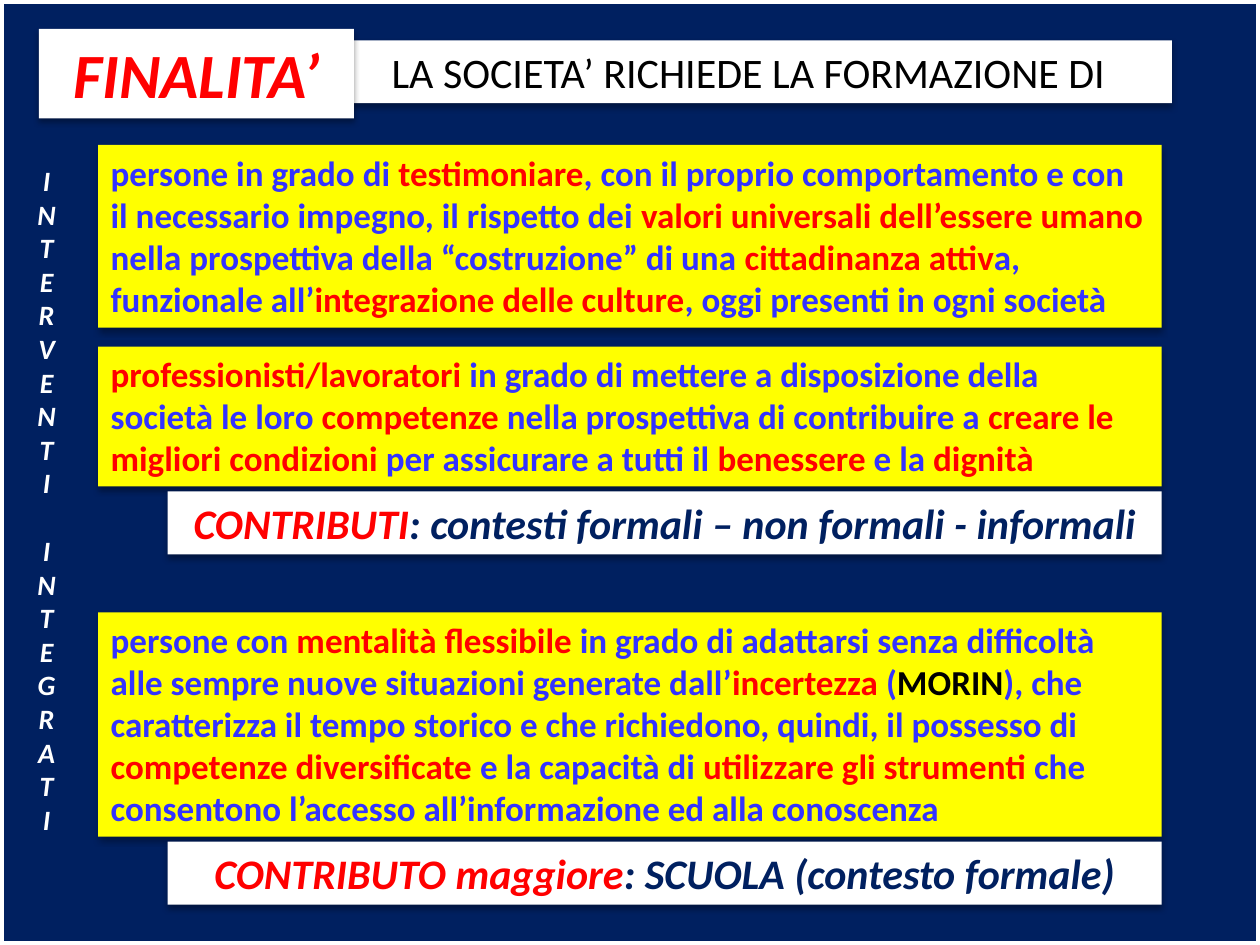
from lxml.etree import SubElement
from pptx import Presentation
from pptx.dml.color import RGBColor
from pptx.enum.shapes import MSO_SHAPE
from pptx.enum.text import MSO_ANCHOR, MSO_AUTO_SIZE, PP_ALIGN
from pptx.oxml.ns import qn
from pptx.util import Inches, Pt

NAVY = RGBColor(0x00, 0x20, 0x60)
WHITE = RGBColor(0xFF, 0xFF, 0xFF)
YELLOW = RGBColor(0xFF, 0xFF, 0x00)
BLUE = RGBColor(0x33, 0x33, 0xFF)
RED = RGBColor(0xFF, 0x00, 0x00)
BLACK = RGBColor(0x00, 0x00, 0x00)

deck = Presentation()
deck.slide_width, deck.slide_height = Inches(10), Inches(7.5)
page = deck.slides.add_slide(deck.slide_layouts[6])

# Grid of 100 columns by 75 rows
COLUMN = deck.slide_width / 100
ROW = deck.slide_height / 75
RIGHT_EDGE = 92.2


def write(para, spans, size, bold=True, italic=False, align=PP_ALIGN.LEFT):
    para.alignment = align
    for text, colour in spans:
        span = para.add_run()
        span.text = text
        span.font.name = "Calibri"
        span.font.size = Pt(size)
        span.font.bold, span.font.italic = bold, italic
        span.font.color.rgb = colour


def add_panel(left, top, width, height, fill, spans, size, **style):
    box = page.shapes.add_shape(MSO_SHAPE.RECTANGLE, int(left * COLUMN), int(top * ROW),
                                int(width * COLUMN), int(height * ROW))
    box.fill.solid()
    box.fill.fore_color.rgb = fill
    box.line.fill.background()
    # Soft shadow straight below the panel
    box.shadow.inherit = False
    effects = box._element.spPr.find(qn("a:effectLst"))
    shadow = SubElement(effects, qn("a:outerShdw"), blurRad=str(Pt(3.5)), dist=str(Pt(2.2)),
                        dir="5400000", rotWithShape="0")
    shade = SubElement(shadow, qn("a:srgbClr"), val=str(BLACK))
    SubElement(shade, qn("a:alpha"), val="32000")
    frame = box.text_frame
    frame.word_wrap = True
    frame.auto_size = MSO_AUTO_SIZE.SHAPE_TO_FIT_TEXT
    frame.vertical_anchor = MSO_ANCHOR.TOP
    write(frame.paragraphs[0], spans, size, **style)


# Background and white border
page.background.fill.solid()
page.background.fill.fore_color.rgb = NAVY
border = page.shapes.add_shape(MSO_SHAPE.RECTANGLE, 0, 0, deck.slide_width, deck.slide_height)
border.shadow.inherit = False
border.fill.background()
border.line.color.rgb = WHITE
border.line.width = Pt(4.5)

# Heading: subtitle strip with the title plate over its left end
add_panel(25.8, 3.2, 67.2, 5, WHITE, [("LA SOCIETA’ RICHIEDE LA FORMAZIONE DI", BLACK)],
          24, bold=False, align=PP_ALIGN.CENTER)
add_panel(3.1, 2.3, 25, 7.1, WHITE, [("FINALITA’", RED)], 36, italic=True,
          align=PP_ALIGN.CENTER)

# Yellow panels: top row, height, text
goals = [
    (11.5, 14.5, [
        ("persone in grado di ", BLUE), ("testimoniare", RED),
        (", con il proprio comportamento e con il necessario impegno, il rispetto dei ", BLUE),
        ("valori universali dell’essere umano ", RED),
        ("nella prospettiva della “costruzione” di una ", BLUE),
        ("cittadinanza attiv", RED), ("a, funzionale all’", BLUE),
        ("integrazione delle culture", RED), (", oggi presenti in ogni società", BLUE)]),
    (27.5, 11.1, [
        ("professionisti/lavoratori ", RED),
        ("in grado di mettere a disposizione della società le loro ", BLUE),
        ("competenze", RED), (" nella prospettiva di contribuire a ", BLUE),
        ("creare le migliori condizioni", RED), (" per assicurare a tutti il ", BLUE),
        ("benessere", RED), (" e la ", BLUE), ("dignità", RED)]),
    (48.6, 17.8, [
        ("persone con ", BLUE), ("mentalità flessibile ", RED),
        ("in grado di adattarsi senza difficoltà alle sempre nuove situazioni "
         "generate dall’", BLUE),
        ("incertezza ", RED), ("(", BLUE), ("MORIN", BLACK),
        ("), che caratterizza il tempo storico e che richiedono, quindi, "
         "il possesso di ", BLUE),
        ("competenze diversificate ", RED), ("e la capacità di ", BLUE),
        ("utilizzare gli strumenti ", RED),
        ("che consentono l’accesso all’informazione ed alla conoscenza", BLUE)]),
]
for top, height, spans in goals:
    add_panel(7.8, top, RIGHT_EDGE - 7.8, height, YELLOW, spans, 20)

# White contribution strips
contributions = [
    (39, "CONTRIBUTI", ": contesti formali – non formali - informali"),
    (66.8, "CONTRIBUTO maggiore", ": SCUOLA (contesto formale)"),
]
for top, label, detail in contributions:
    add_panel(13.3, top, RIGHT_EDGE - 13.3, 5, WHITE, [(label, RED), (detail, NAVY)],
              24, italic=True, align=PP_ALIGN.CENTER)

# Side caption, one letter a line, with one line's gap between the words
caption = page.shapes.add_textbox(int(0.2 * COLUMN), int(12.5 * ROW),
                                  int(7 * COLUMN), int(57.6 * ROW))
frame = caption.text_frame
frame.word_wrap = True
frame.auto_size = MSO_AUTO_SIZE.SHAPE_TO_FIT_TEXT
first_word, second_word = "INTERVENTI", "INTEGRATI"
for index, letter in enumerate(first_word + second_word):
    para = frame.add_paragraph() if index else frame.paragraphs[0]
    write(para, [(letter, WHITE)], 16, italic=True, align=PP_ALIGN.CENTER)
    if index == len(first_word):
        para.space_before = Pt(19.5)

deck.save("out.pptx")
